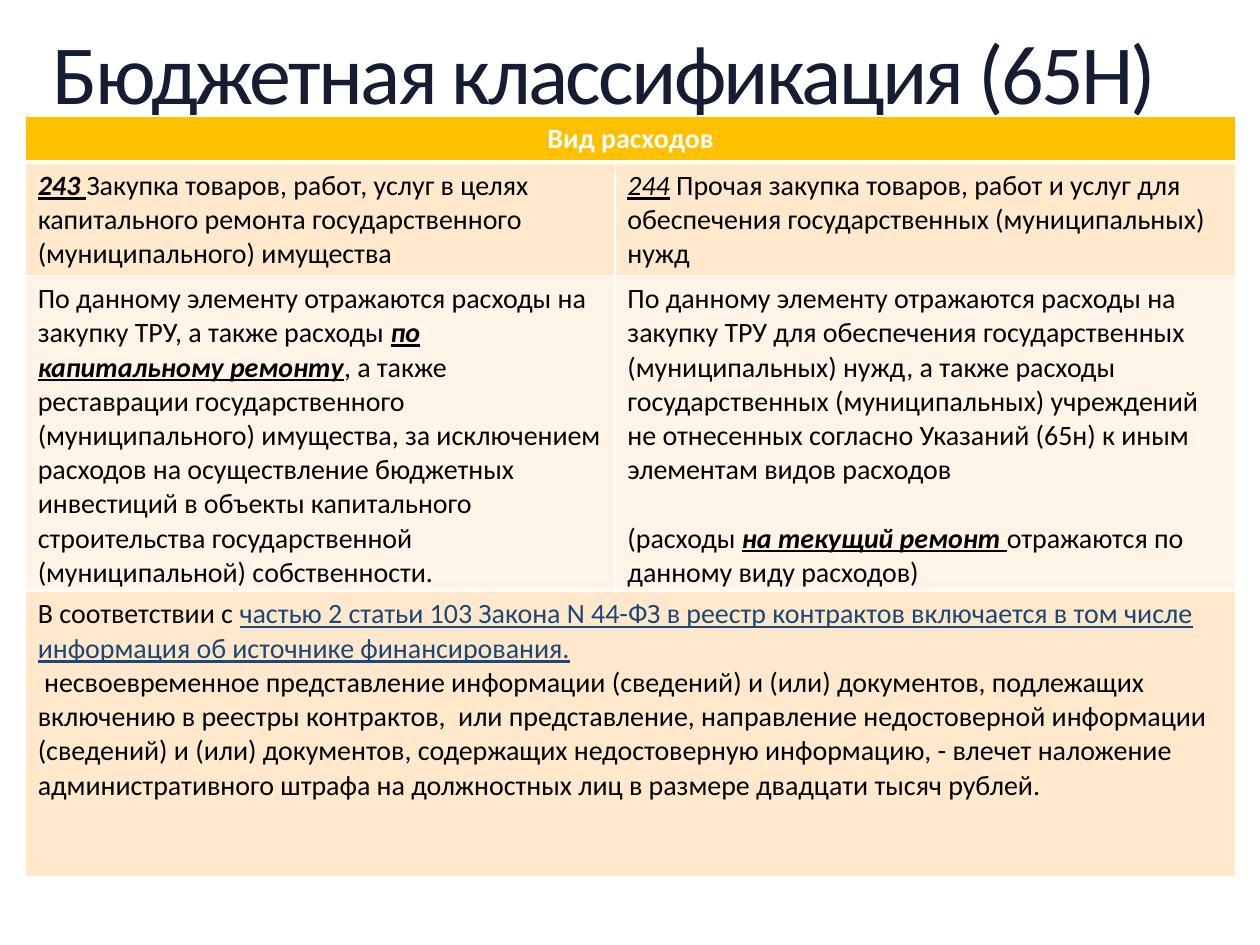
import pptx
import pptx.util
import pptx.dml.color
import pptx.enum.text
import pptx.oxml

# Content: a cell is a list of paragraphs, a paragraph a list of (text, style) runs
TITLE = "Бюджетная классификация (65Н)"
HEAD = [[("Вид расходов", "head")]]
CODES = [
    [[("243 ", "key"),
      ("Закупка товаров, работ, услуг в целях капитального ремонта "
       "государственного (муниципального) имущества", "body")]],
    [[("244", "code"),
      (" Прочая закупка товаров, работ и услуг для обеспечения "
       "государственных (муниципальных) нужд", "body")]],
]
NOTES = [
    [[("По данному элементу отражаются расходы на закупку ТРУ, а также расходы ", "body"),
      ("по капитальному ремонту", "key"),
      (", а также реставрации государственного (муниципального) имущества, "
       "за исключением расходов на осуществление бюджетных инвестиций в объекты "
       "капитального строительства государственной (муниципальной) собственности.", "body")]],
    [[("По данному элементу отражаются расходы на закупку ТРУ для обеспечения "
       "государственных (муниципальных) нужд, а также расходы государственных "
       "(муниципальных) учреждений не отнесенных согласно Указаний (65н) к иным "
       "элементам видов расходов", "body")],
     [("(расходы ", "body"), ("на текущий ремонт ", "key"),
      ("отражаются по данному виду расходов)", "body")]],
]
LAW = [
    [("В соответствии с ", "body"),
     ("частью 2 статьи 103 Закона N 44-ФЗ в реестр контрактов включается "
      "в том числе информация об источнике финансирования.", "link")],
    [(" несвоевременное представление информации (сведений) и (или) документов, "
      "подлежащих включению в реестры контрактов,  или представление, направление "
      "недостоверной информации (сведений) и (или) документов, содержащих "
      "недостоверную информацию, - влечет наложение административного штрафа "
      "на должностных лиц в размере двадцати тысяч рублей.", "body")],
]

# Rows: height, fill, cells (a single cell spans the table), gap between paragraphs
ROWS = [
    (0.36, "gold", [HEAD], 0),
    (0.87, "dark", CODES, 0),
    (2.41, "pale", NOTES, 19.5),
    (2.27, "dark", [LAW], 0),
]
COLS = [4.68, 4.93]

THEME = {
    "font": "Calibri", "title": 48, "text": 16, "ink": "161D32",
    "gold": "FFC000", "dark": "FFE8CC", "pale": "FFF4E7", "line": "FFFFFF",
    # colour, bold, italic, underline
    "runs": {
        "head": ("FFFFFF", True, False, False),
        "body": ("000000", False, False, False),
        "code": ("000000", False, True, True),
        "key": ("000000", True, True, True),
        "link": ("1D4775", False, False, True),
    },
}
ALIGN = pptx.enum.text.PP_ALIGN
NS = 'xmlns:a="http://schemas.openxmlformats.org/drawingml/2006/main"'


def rgb(code):
    return pptx.dml.color.RGBColor.from_string(code)


def write(cell, paras, gap):
    frame = cell.text_frame
    for i, runs in enumerate(paras):
        para = frame.paragraphs[0] if i == 0 else frame.add_paragraph()
        if i and gap:
            para.space_before = pptx.util.Pt(gap)
        para.alignment = ALIGN.CENTER if paras is HEAD else ALIGN.LEFT
        para.font.name = THEME["font"]
        para.font.size = pptx.util.Pt(THEME["text"])
        for text, style in runs:
            run = para.add_run()
            run.text = text
            tone, run.font.bold, run.font.italic, run.font.underline = THEME["runs"][style]
            run.font.color.rgb = rgb(tone)


def edge(cell, base):
    props = cell._tc.get_or_add_tcPr()
    for i, (side, size) in enumerate(zip("LRTB", (1, 1, 1, base))):
        props.insert(i, pptx.oxml.parse_xml(
            f'<a:ln{side} {NS} w="{size * 12700}"><a:solidFill>'
            f'<a:srgbClr val="{THEME["line"]}"/></a:solidFill></a:ln{side}>'))


def main():
    deck = pptx.Presentation()
    inch = pptx.util.Inches
    deck.slide_width, deck.slide_height = inch(10), inch(7.5)
    slide = deck.slides.add_slide(deck.slide_layouts[5])

    # Title
    title = slide.shapes.title
    title.left, title.top, title.width, title.height = map(inch, (0.42, 0.25, 9.17, 0.51))
    frame = title.text_frame
    frame.margin_left = frame.margin_right = frame.margin_top = frame.margin_bottom = 0
    frame.vertical_anchor = pptx.enum.text.MSO_ANCHOR.TOP
    frame.auto_size = pptx.enum.text.MSO_AUTO_SIZE.SHAPE_TO_FIT_TEXT
    frame.word_wrap = True
    frame.text = TITLE
    para = frame.paragraphs[0]
    para.alignment, para.line_spacing = ALIGN.LEFT, 0.9
    para.font.name = THEME["font"]
    para.font.size = pptx.util.Pt(THEME["title"])
    para.font.color.rgb = rgb(THEME["ink"])
    para.runs[0].font._element.set("spc", "-150")

    # Table
    high = sum(row[0] for row in ROWS)
    table = slide.shapes.add_table(
        len(ROWS), len(COLS), inch(0.2), inch(0.92), inch(sum(COLS)), inch(high)).table
    table.horz_banding = False
    for col, width in zip(table.columns, COLS):
        col.width = inch(width)
    for r, (height, fill, cells, gap) in enumerate(ROWS):
        table.rows[r].height = inch(height)
        for c in range(len(COLS)):
            cell = table.cell(r, c)
            cell.fill.solid()
            cell.fill.fore_color.rgb = rgb(THEME[fill])
            edge(cell, 3 if r == 0 else 1)
        if len(cells) == 1:
            table.cell(r, 0).merge(table.cell(r, len(COLS) - 1))
        for c, paras in enumerate(cells):
            write(table.cell(r, c), paras, gap)

    deck.save("out.pptx")


if __name__ == "__main__":
    main()
